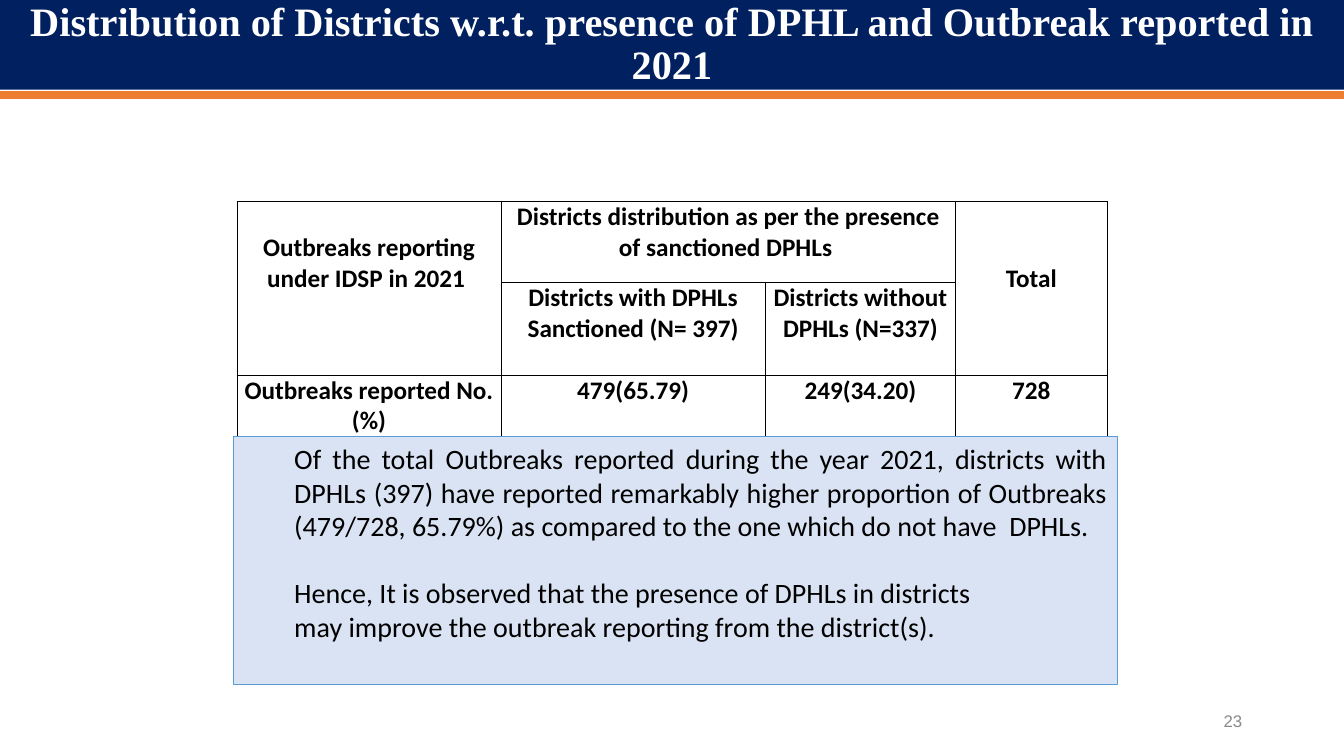
from dataclasses import dataclass

from lxml.etree import SubElement
from pptx import Presentation
from pptx.dml.color import RGBColor
from pptx.enum.shapes import MSO_SHAPE
from pptx.enum.text import MSO_ANCHOR as Anchor, PP_ALIGN as Align
from pptx.oxml.ns import qn
from pptx.util import Inches, Pt


@dataclass(frozen=True)
class Theme:
    navy: str = "002060"
    orange: str = "ED7D31"
    pale_blue: str = "DAE3F3"
    blue: str = "5B9BD5"
    white: str = "FFFFFF"
    black: str = "000000"
    grey: str = "898989"
    title_font: str = "Times New Roman"
    body_font: str = "Calibri"
    number_font: str = "Arial"
    title_size: float = 28.8
    table_size: float = 18
    finding_size: float = 20
    number_size: float = 12


THEME = Theme()

TITLE = "Distribution of Districts w.r.t. presence of DPHL and Outbreak reported in 2021"

COLUMN_WIDTHS = (2.62, 2.62, 1.89, 1.5)
ROW_HEIGHTS = (0.8, 0.91, 0.61)
# First row, first column, last row, last column, top margin, text
CELLS = (
    (0, 0, 1, 0, 0.31, "Outbreaks reporting under IDSP in 2021 "),
    (0, 1, 0, 2, 0, "Districts distribution as per the presence of sanctioned DPHLs "),
    (0, 3, 1, 3, 0.61, "Total"),
    (1, 1, 1, 1, 0, "Districts with DPHLs Sanctioned (N= 397)"),
    (1, 2, 1, 2, 0, "Districts without DPHLs (N=337)"),
    (2, 0, 2, 0, 0, "Outbreaks reported No.(%)"),
    (2, 1, 2, 1, 0, "479(65.79)"),
    (2, 2, 2, 2, 0, "249(34.20)"),
    (2, 3, 2, 3, 0, "728"),
)

FINDINGS = (
    "Of the total Outbreaks reported during the year 2021, districts with DPHLs (397) "
    "have reported remarkably higher proportion of Outbreaks (479/728, 65.79%) "
    "as compared to the one which do not have  DPHLs. ",
    "Hence, It is observed that the presence of DPHLs in districts ",
    "may improve the outbreak reporting from the district(s).",
)


def paint(target, color):
    target.fill.solid()
    target.fill.fore_color.rgb = RGBColor.from_string(color)


def place(shape, left, top, width, height):
    shape.left, shape.top = Inches(left), Inches(top)
    shape.width, shape.height = Inches(width), Inches(height)


def format_text(frame, font, size, color, align, bold=False):
    for paragraph in frame.paragraphs:
        paragraph.alignment = align
        for run in paragraph.runs:
            run.font.name = font
            run.font.size = Pt(size)
            run.font.bold = bold
            run.font.color.rgb = RGBColor.from_string(color)


def add_box(slide, left, top, width, height, fill, line, line_width):
    box = slide.shapes.add_shape(
        MSO_SHAPE.RECTANGLE, Inches(left), Inches(top), Inches(width), Inches(height))
    box.shadow.inherit = False
    paint(box, fill)
    box.line.color.rgb = RGBColor.from_string(line)
    box.line.width = Pt(line_width)
    return box


def add_title(slide):
    title = slide.shapes.title
    place(title, 0, 0, 13.33, 0.89)
    paint(title, THEME.navy)
    frame = title.text_frame
    frame.text = TITLE
    frame.word_wrap = True
    frame.vertical_anchor = Anchor.MIDDLE
    frame.paragraphs[0].line_spacing = 0.9
    format_text(frame, THEME.title_font, THEME.title_size, THEME.white, Align.CENTER, True)


def outline_cell(cell):
    properties = cell._tc.get_or_add_tcPr()
    for position, side in enumerate(("lnL", "lnR", "lnT", "lnB")):
        border = SubElement(properties, qn(f"a:{side}"), w=str(Pt(0.5)))
        fill = SubElement(border, qn("a:solidFill"))
        SubElement(fill, qn("a:srgbClr"), val=THEME.black)
        properties.insert(position, border)


def add_outbreak_table(slide):
    table = slide.shapes.add_table(
        len(ROW_HEIGHTS), len(COLUMN_WIDTHS), Inches(2.35), Inches(2),
        Inches(sum(COLUMN_WIDTHS)), Inches(sum(ROW_HEIGHTS))).table
    table.first_row = table.horz_banding = False
    for column, width in zip(table.columns, COLUMN_WIDTHS):
        column.width = Inches(width)
    for row, height in zip(table.rows, ROW_HEIGHTS):
        row.height = Inches(height)
    for cell in table.iter_cells():
        cell.margin_left = cell.margin_right = Inches(0.06)
        cell.margin_top = cell.margin_bottom = 0
        paint(cell, THEME.white)
        outline_cell(cell)
    for row, column, last_row, last_column, top_margin, text in CELLS:
        cell = table.cell(row, column)
        if (row, column) != (last_row, last_column):
            cell.merge(table.cell(last_row, last_column))
        cell.margin_top = Inches(top_margin)
        cell.text_frame.text = text
        format_text(cell.text_frame, THEME.body_font, THEME.table_size,
                    THEME.black, Align.CENTER, True)


def add_findings(slide):
    panel = add_box(slide, 2.32, 4.33, 8.76, 2.46, THEME.pale_blue, THEME.blue, 0.75)
    frame = panel.text_frame
    frame.text = "\n".join(FINDINGS)
    frame.word_wrap = True
    frame.vertical_anchor = Anchor.TOP
    format_text(frame, THEME.body_font, THEME.finding_size, THEME.black, Align.JUSTIFY)
    for paragraph in frame.paragraphs:
        indent = paragraph._p.get_or_add_pPr()
        indent.set("marL", str(Inches(0.5)))
        indent.set("indent", "0")
    # One line of air before the conclusion
    frame.paragraphs[1].space_before = Pt(24)


def add_slide_number(slide, number):
    box = slide.shapes.add_textbox(Inches(9.42), Inches(6.95), Inches(3), Inches(0.4))
    frame = box.text_frame
    frame.text = number
    frame.word_wrap = True
    frame.vertical_anchor = Anchor.MIDDLE
    format_text(frame, THEME.number_font, THEME.number_size, THEME.grey, Align.RIGHT)


def main():
    deck = Presentation()
    deck.slide_width, deck.slide_height = Inches(13.33), Inches(7.5)
    title_only = deck.slide_layouts[5]
    slide = deck.slides.add_slide(title_only)

    # Header
    add_title(slide)
    add_box(slide, 0, 0.91, 13.33, 0.07, THEME.orange, THEME.orange, 1)

    # Content
    add_outbreak_table(slide)
    add_findings(slide)

    # Footer
    add_slide_number(slide, "23")
    deck.save("out.pptx")


if __name__ == "__main__":
    main()
